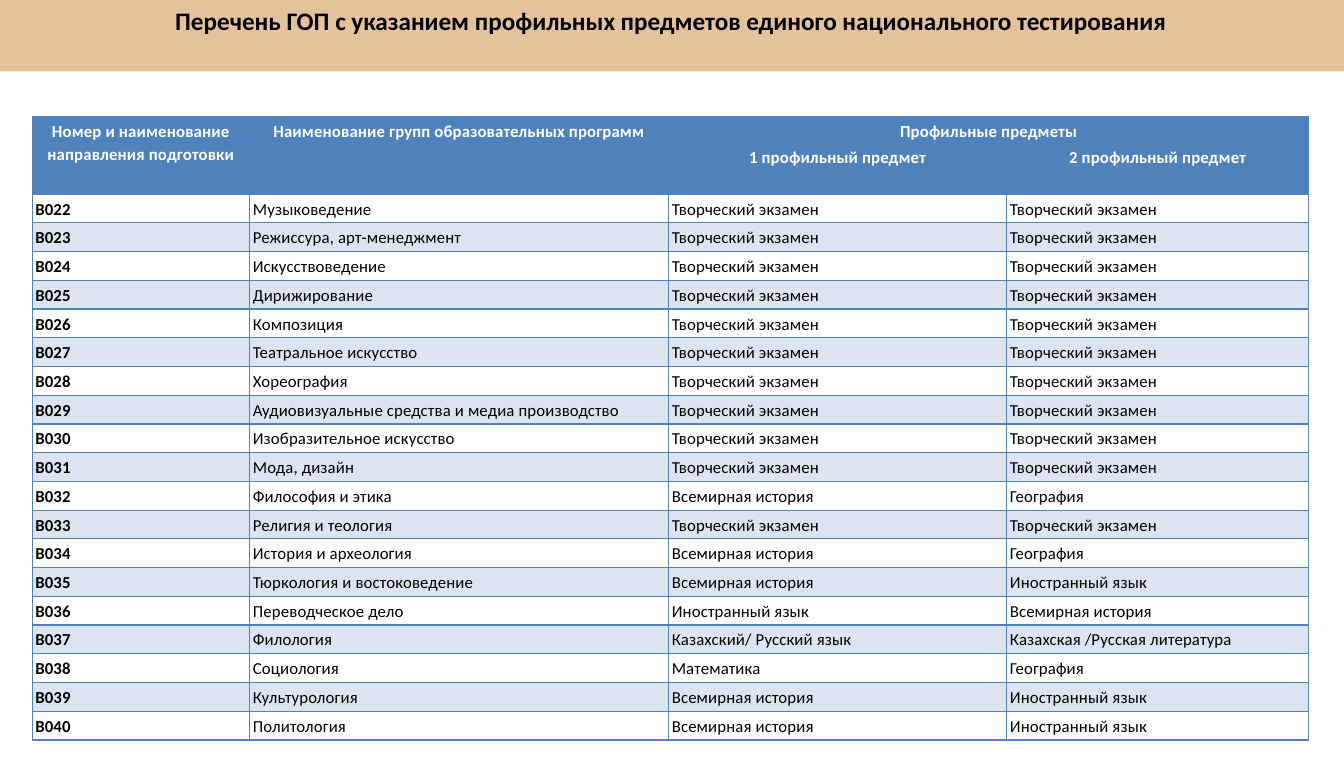
from lxml.etree import SubElement
from pptx import Presentation
from pptx.dml.color import RGBColor
from pptx.enum.text import MSO_ANCHOR, MSO_AUTO_SIZE, PP_ALIGN
from pptx.oxml import parse_xml
from pptx.oxml.ns import nsdecls, qn
from pptx.util import Cm, Pt

COLOURS = {"band": "E4C29C", "blue": "4F81BD", "white": "FFFFFF", "black": "000000"}
TITLE = "Перечень ГОП с указанием профильных предметов единого национального тестирования"
HEADINGS = {
    (0, 0): "Номер и наименование направления подготовки",
    (0, 1): "Наименование групп образовательных программ",
    (0, 2): "Профильные предметы",
    (1, 2): "1 профильный предмет",
    (1, 3): "2 профильный предмет",
}
MERGES = [((0, 0), (1, 0)), ((0, 1), (1, 1)), ((0, 2), (0, 3))]
CREATIVE = ("Творческий экзамен", "Творческий экзамен")
HISTORY_GEOGRAPHY = ("Всемирная история", "География")
HISTORY_LANGUAGE = ("Всемирная история", "Иностранный язык")
FIRST_CODE = 22
PROGRAMMES = [
    ("Музыковедение", *CREATIVE),
    ("Режиссура, арт-менеджмент", *CREATIVE),
    ("Искусствоведение", *CREATIVE),
    ("Дирижирование", *CREATIVE),
    ("Композиция", *CREATIVE),
    ("Театральное искусство", *CREATIVE),
    ("Хореография", *CREATIVE),
    ("Аудиовизуальные средства и медиа производство", *CREATIVE),
    ("Изобразительное искусство", *CREATIVE),
    ("Мода, дизайн", *CREATIVE),
    ("Философия и этика", *HISTORY_GEOGRAPHY),
    ("Религия и теология", *CREATIVE),
    ("История и археология", *HISTORY_GEOGRAPHY),
    ("Тюркология и востоковедение", *HISTORY_LANGUAGE),
    ("Переводческое дело", "Иностранный язык", "Всемирная история"),
    ("Филология", "Казахский/ Русский язык", "Казахская /Русская литература"),
    ("Социология", "Математика", "География"),
    ("Культурология", *HISTORY_LANGUAGE),
    ("Политология", *HISTORY_LANGUAGE),
]
COLUMN_WIDTHS = [5.49, 10.57, 8.53, 7.62]
HEADER_HEIGHTS = [0.66, 1.29]


def write_text(frame, text, size=12, colour="black", bold=False,
               align=PP_ALIGN.LEFT, line_spacing=None, tracking=None):
    """Write one formatted paragraph into a text frame."""
    para = frame.paragraphs[0]
    para.alignment = align
    if line_spacing:
        para.line_spacing = line_spacing
    span = para.add_run()
    span.text = text
    span.font.name = "Calibri"
    span.font.size = Pt(size)
    span.font.bold = bold
    span.font.color.rgb = RGBColor.from_string(COLOURS[colour])
    if tracking:
        span.font._element.set("spc", str(tracking))


def style_cell(cell, inset_x, inset_y, opacity):
    """Set the insets, blue fill opacity in percent and borders of a cell."""
    cell.margin_left = cell.margin_right = Cm(inset_x)
    cell.margin_top = cell.margin_bottom = Cm(inset_y)
    properties = cell._tc.get_or_add_tcPr()
    if opacity:
        cell.fill.solid()
        cell.fill.fore_color.rgb = RGBColor.from_string(COLOURS["blue"])
        if opacity < 100:
            colour = properties.find(".//" + qn("a:srgbClr"))
            SubElement(colour, qn("a:alpha"), val=str(opacity * 1000))
    else:
        cell.fill.background()
    for position, side in enumerate(("lnL", "lnR", "lnT", "lnB")):
        properties.insert(position, parse_xml(
            f'<a:{side} {nsdecls("a")} w="{Pt(1)}"><a:solidFill>'
            f'<a:srgbClr val="{COLOURS["blue"]}"/></a:solidFill></a:{side}>'))


def add_title_band(page, left, top, width, height):
    """Turn the title placeholder into the coloured band."""
    band = page.shapes.title
    band.left, band.top, band.width, band.height = map(Cm, (left, top, width, height))
    band.fill.solid()
    band.fill.fore_color.rgb = RGBColor.from_string(COLOURS["band"])
    frame = band.text_frame
    frame.word_wrap = True
    frame.auto_size = MSO_AUTO_SIZE.NONE
    frame.vertical_anchor = MSO_ANCHOR.TOP
    write_text(frame, TITLE, size=18, bold=True, align=PP_ALIGN.CENTER)


def add_programme_table(page, left, top, width, height):
    """Add the table of programmes with its two-row header."""
    header_count = len(HEADER_HEIGHTS)
    table = page.shapes.add_table(
        header_count + len(PROGRAMMES), len(COLUMN_WIDTHS),
        Cm(left), Cm(top), Cm(width), Cm(height)).table
    table.first_row = table.horz_banding = False
    for column, share in zip(table.columns, COLUMN_WIDTHS):
        column.width = Cm(width * share / sum(COLUMN_WIDTHS))
    body_height = (height - sum(HEADER_HEIGHTS)) / len(PROGRAMMES)
    for row, row_height in zip(table.rows, HEADER_HEIGHTS + [body_height] * len(PROGRAMMES)):
        row.height = Cm(row_height)

    for start, end in MERGES:
        table.cell(*start).merge(table.cell(*end))
    for row in range(header_count):
        for column in range(len(COLUMN_WIDTHS)):
            cell = table.cell(row, column)
            style_cell(cell, 0.05, 0.03, 100)
            if (row, column) in HEADINGS:
                write_text(cell.text_frame, HEADINGS[row, column], colour="white", bold=True,
                           align=PP_ALIGN.CENTER, line_spacing=1.15, tracking=10)

    for index, programme in enumerate(PROGRAMMES):
        code = f"В{FIRST_CODE + index:03}"
        for column, text in enumerate((code, *programme)):
            cell = table.cell(header_count + index, column)
            style_cell(cell, 0.08, 0.05, 20 * (index % 2))
            write_text(cell.text_frame, text, bold=column == 0,
                       line_spacing=1.15, tracking=10)


def main():
    """Build and save the deck."""
    deck = Presentation()
    deck.slide_width, deck.slide_height = Cm(33.91), Cm(19.51)
    page = deck.slides.add_slide(deck.slide_layouts[5])
    add_programme_table(page, 0.81, 2.95, 32.21, 15.74)
    add_title_band(page, -0.05, 0, 33.96, 1.8)
    deck.save("out.pptx")


if __name__ == "__main__":
    main()
